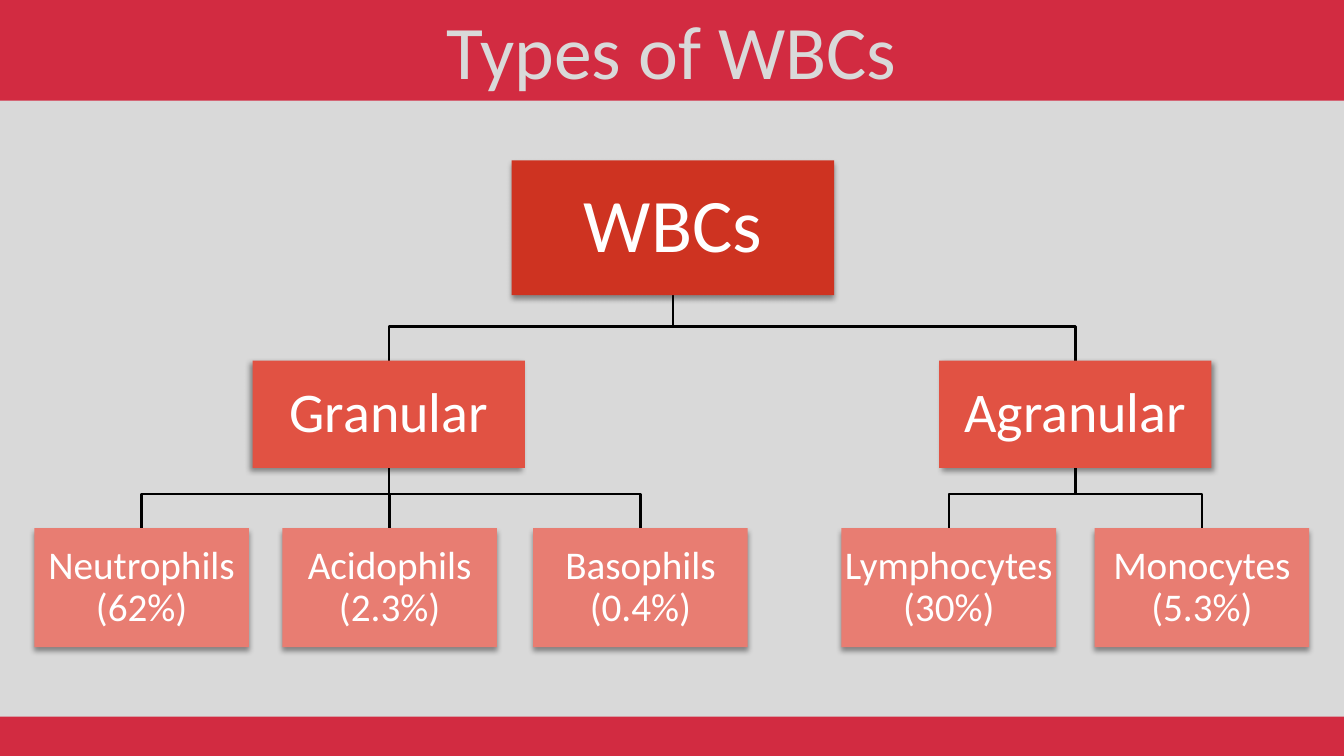
"""Build a slide with a tree of the types of white blood cells."""
import lxml.etree
import pptx
import pptx.dml.color
import pptx.enum.shapes
import pptx.enum.text
import pptx.oxml.ns
import pptx.util

Cm = pptx.util.Cm
Pt = pptx.util.Pt
RGBColor = pptx.dml.color.RGBColor
RECTANGLE = pptx.enum.shapes.MSO_SHAPE.RECTANGLE
qn = pptx.oxml.ns.qn

GREY = RGBColor(0xD9, 0xD9, 0xD9)
CRIMSON = RGBColor(0xD2, 0x2B, 0x41)
BLACK = RGBColor(0x00, 0x00, 0x00)
WHITE = RGBColor(0xFF, 0xFF, 0xFF)
RED = RGBColor(0xCE, 0x33, 0x21)
CORAL = RGBColor(0xE1, 0x52, 0x43)
PINK = RGBColor(0xE8, 0x7D, 0x72)

WIDTH, HEIGHT = 33.87, 19.05
BEND_ABOVE_CHILD = 0.86

# level: top, width, height, fill, font size, inset
LEVELS = [
    (4.04, 8.13, 3.4, RED, 54, 0.1),
    (9.09, 6.86, 2.7, CORAL, 40, 0.08),
    (13.31, 5.41, 3.0, PINK, 28, 0.05),
]
# node: text, level, centre, parent, shadow angle
NODES = [
    ("WBCs", 0, 16.96, None, 90),
    ("Granular", 1, 9.8, 0, 135),
    ("Neutrophils (62%)", 2, 3.57, 1, 90),
    ("Acidophils (2.3%)", 2, 9.82, 1, 90),
    ("Basophils (0.4%)", 2, 16.14, 1, 90),
    ("Agranular", 1, 27.1, 0, 45),
    ("Lymphocytes (30%)", 2, 23.91, 5, 90),
    ("Monocytes (5.3%)", 2, 30.29, 5, 90),
]


def add_rect(left, top, width, height, color):
    sp = s.shapes.add_shape(RECTANGLE, Cm(left), Cm(top), Cm(width), Cm(height))
    sp.shadow.inherit = False
    sp.fill.solid()
    sp.fill.fore_color.rgb = color
    sp.line.fill.background()
    return sp


def set_text(tf, text, size, color):
    tf.text = text
    p = tf.paragraphs[0]
    p.alignment = pptx.enum.text.PP_ALIGN.CENTER
    r = p.runs[0]
    r.font.name = "Calibri"
    r.font.size = Pt(size)
    r.font.color.rgb = color
    return p


prs = pptx.Presentation()
prs.slide_width, prs.slide_height = Cm(WIDTH), Cm(HEIGHT)
s = prs.slides.add_slide(prs.slide_layouts[6])
s.background.fill.solid()
s.background.fill.fore_color.rgb = GREY

add_rect(0, 0, WIDTH, 2.54, CRIMSON)
add_rect(0, 18.06, WIDTH, HEIGHT - 18.06, CRIMSON)

title = s.shapes.add_textbox(Cm(10.95), Cm(-0.02), Cm(11.96), Cm(2.56))
title.text_frame.word_wrap = False
set_text(title.text_frame, "Types of WBCs", 54, GREY)

for text, level, centre, parent, angle in NODES:
    if parent is None:
        continue
    parent_top, _, parent_height = LEVELS[level - 1][:3]
    parent_centre = NODES[parent][2]
    top = LEVELS[level][0]
    bend = top - BEND_ABOVE_CHILD
    branch = s.shapes.build_freeform(Cm(parent_centre), Cm(parent_top + parent_height))
    branch.add_line_segments(
        [(Cm(parent_centre), Cm(bend)), (Cm(centre), Cm(bend)), (Cm(centre), Cm(top))],
        close=False,
    )
    sp = branch.convert_to_shape()
    sp.shadow.inherit = False
    sp.fill.background()
    sp.line.color.rgb = BLACK
    sp.line.width = Pt(1.75)

for text, level, centre, parent, angle in NODES:
    top, width, height, color, size, inset = LEVELS[level]
    sp = add_rect(centre - width / 2, top, width, height, color)
    effects = sp._element.spPr.find(qn("a:effectLst"))
    shadow = lxml.etree.SubElement(
        effects, qn("a:outerShdw"), blurRad=str(Pt(4)), dist=str(Pt(3)),
        dir=str(angle * 60000), algn="ctr", rotWithShape="0",
    )
    shade = lxml.etree.SubElement(shadow, qn("a:srgbClr"), val=str(BLACK))
    lxml.etree.SubElement(shade, qn("a:alpha"), val="40000")
    tf = sp.text_frame
    tf.word_wrap = True
    tf.vertical_anchor = pptx.enum.text.MSO_ANCHOR.MIDDLE
    tf.margin_left = tf.margin_right = tf.margin_top = tf.margin_bottom = Cm(inset)
    p = set_text(tf, text, size, WHITE)
    p.line_spacing = 0.9

prs.save("out.pptx")
